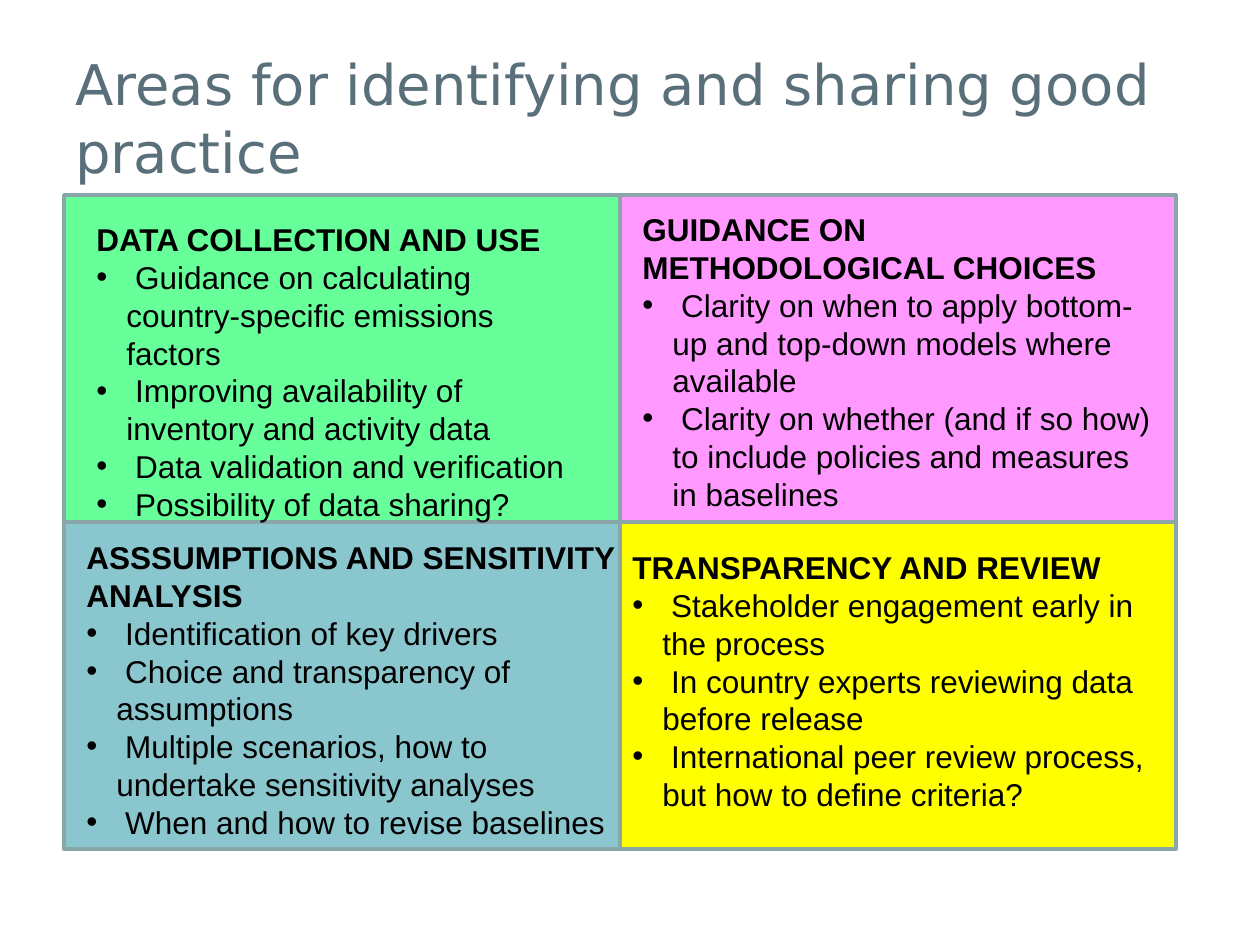
"""Build the slide on areas for identifying and sharing good practice."""
import dataclasses

import lxml.etree
import pptx
import pptx.dml.color
import pptx.enum.text
import pptx.oxml.ns
import pptx.util

PX_PER_INCH = 126
PANEL_LEFT, PANEL_TOP, PANEL_WIDTH, PANEL_HEIGHT = 64, 195, 556, 327
HANGING_INDENT = 30
BORDER = "8AA6A8"
TITLE_FORMAT = {"name": "DejaVu Sans", "size": pptx.util.Pt(32), "bold": False}
BODY_FORMAT = {"name": "Arial", "size": pptx.util.Pt(18)}


@dataclasses.dataclass(frozen=True)
class Area:
    """One quadrant: grid cell, fill, text frame in px, heading and bullets."""

    column: int
    row: int
    fill: str
    frame: tuple[int, int, int, int]
    heading: str
    bullets: tuple[str, ...]


AREAS = (
    Area(0, 0, "66FF99", (84, 214, 517, 289), "DATA COLLECTION AND USE", (
        " Guidance on calculating country-specific emissions factors",
        " Improving availability of inventory and activity data",
        " Data validation and verification",
        " Possibility of data sharing?",
    )),
    Area(0, 1, "8AC6CD", (74, 532, 556, 318), "ASSSUMPTIONS AND SENSITIVITY ANALYSIS", (
        " Identification of key drivers",
        " Choice and transparency of assumptions",
        " Multiple scenarios, how to undertake sensitivity analyses",
        " When and how to revise baselines",
    )),
    Area(1, 0, "FF99FF", (630, 204, 536, 318), "GUIDANCE ON METHODOLOGICAL CHOICES", (
        " Clarity on when to apply bottom-up and top-down models where available",
        " Clarity on whether (and if so how) to include policies and measures in baselines",
    )),
    Area(1, 1, "FFFF00", (620, 542, 546, 280), "TRANSPARENCY AND REVIEW", (
        " Stakeholder engagement early in the process",
        " In country experts reviewing data before release",
        " International peer review process, but how to define criteria?",
    )),
)


def px(length: int) -> pptx.util.Emu:
    """Turn px into EMU."""
    return pptx.util.Emu(round(length * 914400 / PX_PER_INCH))


def color(value: str) -> pptx.dml.color.RGBColor:
    """Turn a hex string into a colour."""
    return pptx.dml.color.RGBColor.from_string(value)


def add_text_box(page, frame: tuple[int, int, int, int]):
    """Add a wrapping text box and return its text frame."""
    text_frame = page.shapes.add_textbox(*map(px, frame)).text_frame
    text_frame.word_wrap = True
    return text_frame


def write(para, text: str, format_values: dict, ink: str) -> None:
    """Add a formatted span to a paragraph."""
    span = para.add_run()
    span.text = text
    for name, value in format_values.items():
        setattr(span.font, name, value)
    span.font.color.rgb = color(ink)


def add_bullet(para) -> None:
    """Give a paragraph a round bullet with a hanging indent."""
    properties = para._p.get_or_add_pPr()
    properties.set("marL", str(px(HANGING_INDENT)))
    properties.set("indent", str(-px(HANGING_INDENT)))
    for tag, name, value in (("a:buFont", "typeface", "Arial"), ("a:buChar", "char", "•")):
        lxml.etree.SubElement(properties, pptx.oxml.ns.qn(tag)).set(name, value)


def add_panel(page, area: Area) -> None:
    """Draw the coloured rectangle of an area."""
    panel = page.shapes.add_shape(
        pptx.enum.shapes.MSO_SHAPE.RECTANGLE,
        px(PANEL_LEFT + area.column * PANEL_WIDTH),
        px(PANEL_TOP + area.row * PANEL_HEIGHT),
        px(PANEL_WIDTH),
        px(PANEL_HEIGHT),
    )
    panel.shadow.inherit = False
    panel.fill.solid()
    panel.fill.fore_color.rgb = color(area.fill)
    panel.line.color.rgb = color(BORDER)
    panel.line.width = pptx.util.Pt(2)


def add_area_text(page, area: Area) -> None:
    """Write the heading and bullets of an area."""
    text_frame = add_text_box(page, area.frame)
    text_frame.auto_size = pptx.enum.text.MSO_AUTO_SIZE.SHAPE_TO_FIT_TEXT
    write(text_frame.paragraphs[0], area.heading, BODY_FORMAT | {"bold": True}, "000000")
    for bullet in area.bullets:
        para = text_frame.add_paragraph()
        add_bullet(para)
        write(para, bullet, BODY_FORMAT | {"bold": False}, "000000")


def main() -> None:
    """Build and save the deck."""
    deck = pptx.Presentation()
    deck.slide_width, deck.slide_height = px(1260), px(945)
    page = deck.slides.add_slide(deck.slide_layouts[6])
    title = add_text_box(page, (63, 38, 1134, 158))
    title.vertical_anchor = pptx.enum.text.MSO_ANCHOR.MIDDLE
    write(title.paragraphs[0], "Areas for identifying and sharing good practice",
          TITLE_FORMAT, "596F7A")
    for area in AREAS:
        add_panel(page, area)
    for area in AREAS:
        add_area_text(page, area)
    deck.save("out.pptx")


if __name__ == "__main__":
    main()
